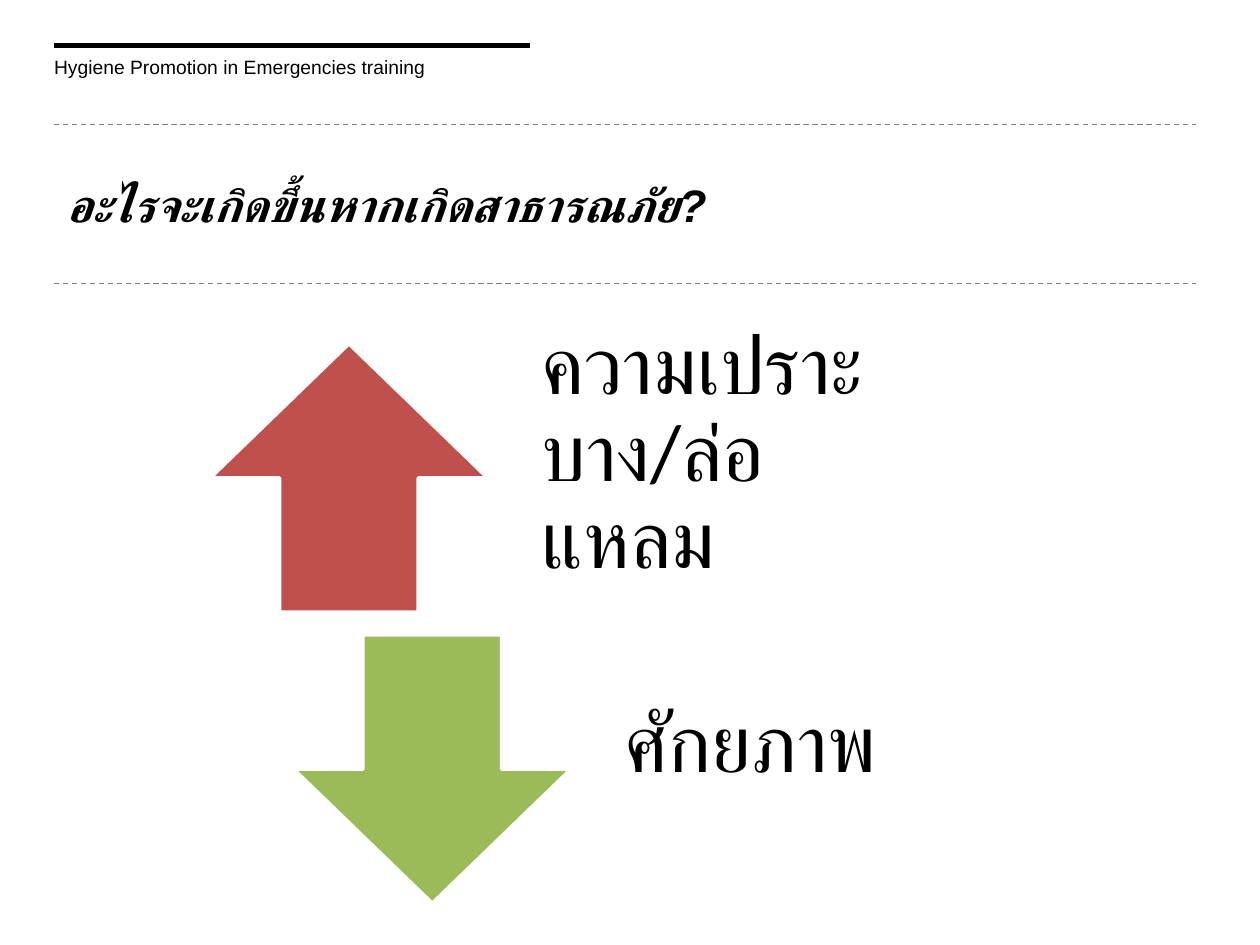
from dataclasses import dataclass

from lxml import etree
from pptx import Presentation
from pptx import util as u
from pptx.dml.color import RGBColor
from pptx.enum import dml, shapes, text
from pptx.oxml.ns import qn

BLACK = RGBColor(0x00, 0x00, 0x00)
WHITE = RGBColor(0xFF, 0xFF, 0xFF)
GREY = RGBColor(0x80, 0x80, 0x80)
RED = RGBColor(0xC0, 0x50, 0x4D)
GREEN = RGBColor(0x9B, 0xBB, 0x59)

# Shared measures in centimetres
MARGIN = 1.09
RULE_WIDTH = 23.01
TITLE_TOP, TITLE_BOTTOM = 2.51, 5.71
ARROW_WIDTH, ARROW_HEIGHT = 5.59, 5.41
LABEL_OFFSET, LABEL_WIDTH = 5.77, 9.47
LABEL_INSET = 0.91


@dataclass
class Rule:
    top: float
    width: float
    color: RGBColor
    weight: float
    dashed: bool


@dataclass
class Change:
    label: str
    arrow: shapes.MSO_SHAPE
    color: RGBColor
    left: float
    top: float


RULES = [
    Rule(0.91, 9.6, BLACK, 3, False),
    Rule(TITLE_BOTTOM, RULE_WIDTH, GREY, 0.75, True),
    Rule(TITLE_TOP, RULE_WIDTH, GREY, 0.75, True),
]
CHANGES = [
    Change("ความเปราะบาง/ล่อแหลม", shapes.MSO_SHAPE.UP_ARROW, RED, 4.24, 6.93),
    Change("ศักยภาพ", shapes.MSO_SHAPE.DOWN_ARROW, GREEN, 5.92, 12.8),
]


def write(frame, words: str, *, size: float, font: str = "Arial",
          bold: bool = False, italic: bool = False, spacing: float = 1.0,
          insets: tuple = (0.25, 0.13, 0.25, 0.13),
          anchor=text.MSO_ANCHOR.MIDDLE) -> None:
    """Fill a text frame; insets run left, top, right, bottom."""
    frame.word_wrap = True
    frame.auto_size = text.MSO_AUTO_SIZE.NONE
    frame.vertical_anchor = anchor
    (frame.margin_left, frame.margin_top,
     frame.margin_right, frame.margin_bottom) = map(u.Cm, insets)
    paragraph = frame.paragraphs[0]
    paragraph.alignment = text.PP_ALIGN.LEFT
    paragraph.line_spacing = spacing
    run = paragraph.add_run()
    run.text = words
    run.font.name = font
    run.font.size = u.Pt(size)
    run.font.bold = bold
    run.font.italic = italic
    run.font.color.rgb = BLACK


def draw_rule(slide, rule: Rule) -> None:
    line = slide.shapes.add_connector(
        shapes.MSO_CONNECTOR.STRAIGHT, u.Cm(MARGIN), u.Cm(rule.top),
        u.Cm(MARGIN + rule.width), u.Cm(rule.top))
    line.line.color.rgb = rule.color
    line.line.width = u.Pt(rule.weight)
    if rule.dashed:
        line.line.dash_style = dml.MSO_LINE.DASH
    etree.SubElement(line._element.spPr, qn("a:effectLst"))


def draw_change(slide, change: Change) -> None:
    arrow = slide.shapes.add_shape(
        change.arrow, u.Cm(change.left), u.Cm(change.top),
        u.Cm(ARROW_WIDTH), u.Cm(ARROW_HEIGHT))
    arrow.shadow.inherit = False
    arrow.fill.solid()
    arrow.fill.fore_color.rgb = change.color
    arrow.line.color.rgb = WHITE
    arrow.line.width = u.Pt(2)

    label = slide.shapes.add_textbox(
        u.Cm(change.left + LABEL_OFFSET), u.Cm(change.top),
        u.Cm(LABEL_WIDTH), u.Cm(ARROW_HEIGHT))
    write(label.text_frame, change.label, size=46, font="Calibri", spacing=0.9,
          insets=(LABEL_INSET, 0, LABEL_INSET, LABEL_INSET))


def main() -> None:
    deck = Presentation()
    deck.slide_width, deck.slide_height = u.Cm(25.4), u.Cm(19.05)
    slide = deck.slides.add_slide(deck.slide_layouts[5])

    # Course name and rules
    course = slide.shapes.add_textbox(u.Cm(MARGIN), u.Cm(1.12), u.Cm(9.6), u.Cm(0.48))
    write(course.text_frame, "Hygiene Promotion in Emergencies training", size=11,
          insets=(0, 0, 0, 0), anchor=text.MSO_ANCHOR.TOP)
    for rule in RULES:
        draw_rule(slide, rule)

    # Title between the dashed rules
    title = slide.shapes.title
    title.left, title.top = u.Cm(MARGIN), u.Cm(TITLE_TOP)
    title.width, title.height = u.Cm(RULE_WIDTH), u.Cm(TITLE_BOTTOM - TITLE_TOP)
    write(title.text_frame, "อะไรจะเกิดขึ้นหากเกิดสาธารณภัย?", size=26,
          bold=True, italic=True)

    # Arrows with their labels
    for change in CHANGES:
        draw_change(slide, change)

    deck.save("out.pptx")


if __name__ == "__main__":
    main()
